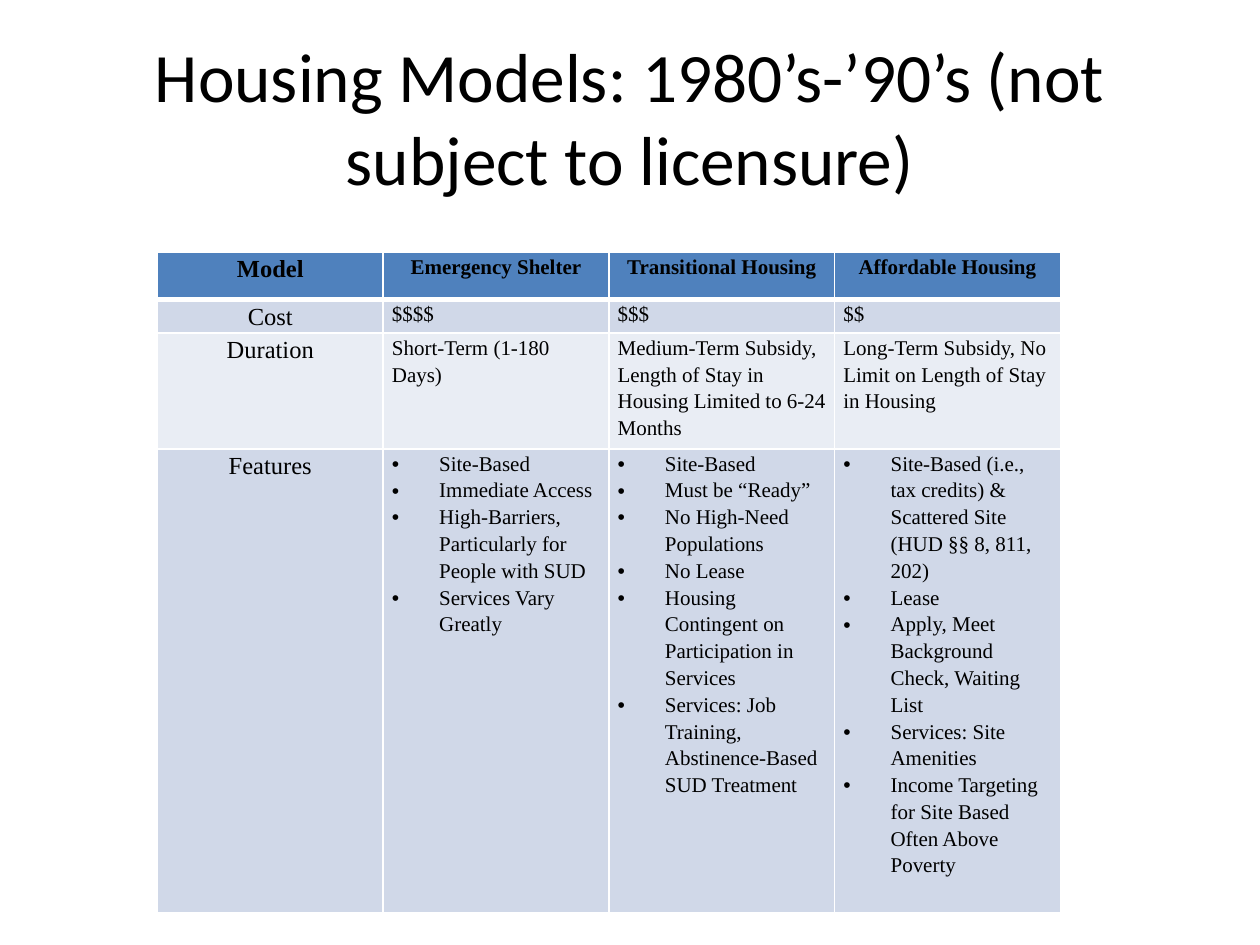
from lxml.etree import SubElement
from pptx import Presentation
from pptx.dml.color import RGBColor
from pptx.enum.text import MSO_ANCHOR as Anchor, PP_ALIGN as Align
from pptx.oxml.ns import qn
from pptx.util import Pt

BLACK = RGBColor(0x00, 0x00, 0x00)
WHITE = RGBColor(0xFF, 0xFF, 0xFF)
HEADER_BLUE = RGBColor(0x4F, 0x81, 0xBD)
BAND_DARK = RGBColor(0xD0, 0xD8, 0xE8)
BAND_LIGHT = RGBColor(0xE9, 0xED, 0xF4)

TITLE = "Housing Models: 1980’s-’90’s (not subject to licensure)"
ROW_HEIGHTS = [27, 15, 64, 218]
ROW_FILLS = [HEADER_BLUE, BAND_DARK, BAND_LIGHT, BAND_DARK]
FEATURES_ROW = 3
ROWS = [
    [["Model"], ["Emergency Shelter"], ["Transitional Housing"], ["Affordable Housing"]],
    [["Cost"], ["$$$$"], ["$$$"], ["$$"]],
    [
        ["Duration"],
        ["Short-Term (1-180 Days)"],
        ["Medium-Term Subsidy, Length of Stay in Housing Limited to 6-24 Months"],
        ["Long-Term Subsidy, No Limit on Length of Stay in Housing"],
    ],
    [
        ["Features"],
        [
            "Site-Based",
            "Immediate Access",
            "High-Barriers, Particularly for People with SUD",
            "Services Vary Greatly",
        ],
        [
            "Site-Based",
            "Must be “Ready”",
            "No High-Need Populations",
            "No Lease",
            "Housing Contingent on Participation in Services",
            "Services: Job Training, Abstinence-Based SUD Treatment",
        ],
        [
            "Site-Based (i.e., tax credits) & Scattered Site (HUD §§ 8, 811, 202)",
            "Lease",
            "Apply, Meet Background Check, Waiting List",
            "Services: Site Amenities",
            "Income Targeting for Site Based Often Above Poverty",
        ],
    ],
]


def apply_format(target, values):
    for name, value in values.items():
        setattr(target, name, value)


def write_para(para, text, font, **layout):
    apply_format(para, layout)
    span = para.add_run()
    span.text = text
    span.font.color.rgb = BLACK
    apply_format(span.font, font)


def add_bullet(para):
    props = para._p.get_or_add_pPr()
    props.set("marL", str(Pt(27)))
    props.set("indent", str(Pt(-27)))
    SubElement(props, qn("a:buFont"), typeface="Arial")
    SubElement(props, qn("a:buChar"), char="•")


def add_borders(cell, widths):
    props = cell._tc.get_or_add_tcPr()
    for side, width in widths.items():
        line = SubElement(props, qn(f"a:ln{side}"), w=str(Pt(width)))
        fill = SubElement(line, qn("a:solidFill"))
        SubElement(fill, qn("a:srgbClr"), val=str(WHITE))


def fill_cell(cell, lines, row, column):
    apply_format(cell, {
        "margin_left": Pt(5), "margin_right": Pt(5),
        "margin_top": 0, "margin_bottom": 0, "vertical_anchor": Anchor.TOP,
    })
    add_borders(cell, {"L": 1, "R": 1, "T": 3 if row == 1 else 1, "B": 3 if row == 0 else 1})
    cell.fill.solid()
    cell.fill.fore_color.rgb = ROW_FILLS[row]
    font = {"name": "Times New Roman", "size": Pt(12 if column else 14), "bold": row == 0}
    centred = row == 0 or column == 0
    frame = cell.text_frame
    for index, text in enumerate(lines):
        para = frame.add_paragraph() if index else frame.paragraphs[0]
        write_para(para, text, font, line_spacing=1.15,
                   alignment=Align.CENTER if centred else Align.LEFT)
        if row == FEATURES_ROW and column:
            add_bullet(para)


def add_title(page, left, top, width, height):
    box = page.shapes.add_textbox(Pt(left), Pt(top), Pt(width), Pt(height))
    frame = box.text_frame
    apply_format(frame, {"word_wrap": True, "vertical_anchor": Anchor.MIDDLE})
    write_para(frame.paragraphs[0], TITLE, {"name": "Calibri", "size": Pt(39.6)},
               alignment=Align.CENTER)


def add_model_table(page, left, top, width):
    frame = page.shapes.add_table(len(ROWS), len(ROWS[0]), Pt(left), Pt(top),
                                  Pt(width), Pt(sum(ROW_HEIGHTS)))
    table = frame.table
    for column in table.columns:
        column.width = Pt(width / len(ROWS[0]))
    for row, cells in enumerate(ROWS):
        table.rows[row].height = Pt(ROW_HEIGHTS[row])
        for column, lines in enumerate(cells):
            fill_cell(table.cell(row, column), lines, row, column)


def main():
    deck = Presentation()
    apply_format(deck, {"slide_width": Pt(720), "slide_height": Pt(540)})
    page = deck.slides.add_slide(deck.slide_layouts[6])
    add_title(page, 36, 21.6, 648, 90)
    add_model_table(page, 90, 144, 516)
    deck.save("out.pptx")


if __name__ == "__main__":
    main()
